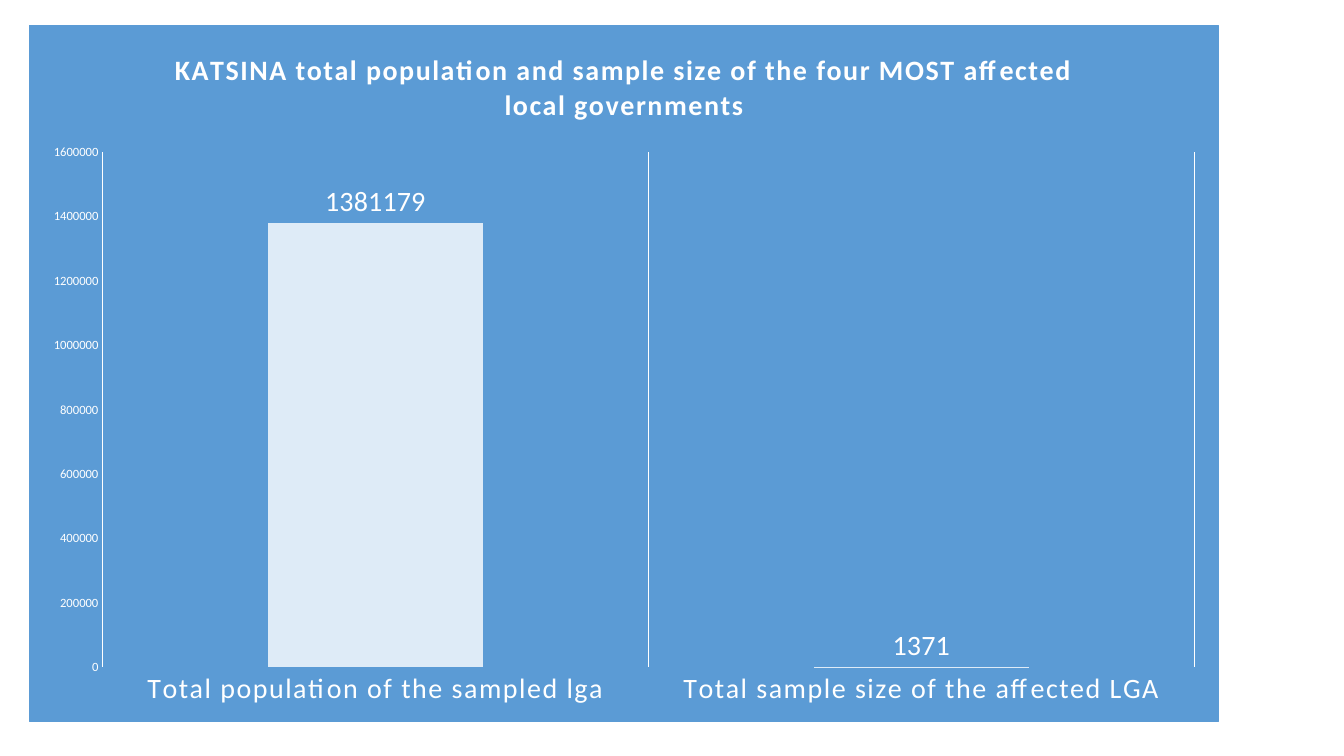
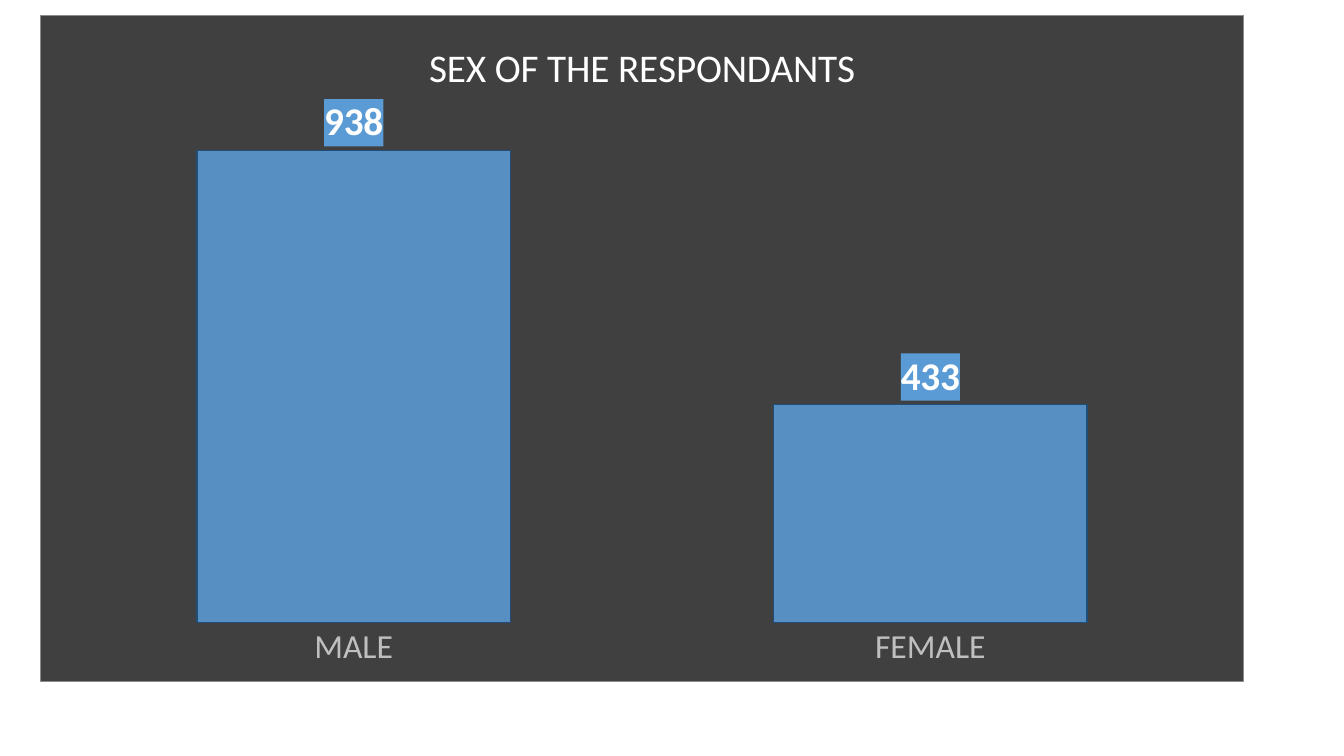
from pptx import Presentation
from pptx.chart.data import CategoryChartData
from pptx.dml.color import RGBColor
from pptx.enum.chart import XL_CHART_TYPE, XL_LABEL_POSITION, XL_TICK_MARK
from pptx.oxml import parse_xml
from pptx.oxml.ns import nsdecls
from pptx.util import Pt

PX = 914400 / 100.8
FONT = "Calibri"
WHITE, BLUE, PALE_BLUE, NAVY = "FFFFFF", "5B9BD5", "DEEBF7", "1F4E79"
CHARCOAL, GRAY, SILVER = "404040", "8C8C8C", "BFBFBF"


def set_font(font, size, color, bold=False, spacing=0):
    font.name, font.size, font.bold = FONT, Pt(size), bold
    font.color.rgb = RGBColor.from_string(color)
    if spacing:
        for props in font_owner.xpath(".//a:defRPr"):
            props.set("spc", str(spacing))


def shape_xml(fill, line="", width=0):
    border = ""
    if line:
        border = (f'<a:ln w="{Pt(width)}"><a:solidFill><a:srgbClr val="{line}"/>'
                  '</a:solidFill></a:ln>')
    return parse_xml(f'<c:spPr {nsdecls("c", "a")}><a:solidFill><a:srgbClr val="{fill}"/>'
                     f'</a:solidFill>{border}</c:spPr>')


# Frame and plot are left, top, width, height in px on the slide
charts = [
    dict(title="KATSINA total population and sample size of the four MOST affected local governments",
         data={"Total population of the sampled lga": 1381179,
               "Total sample size of the affected LGA": 1371},
         frame=(29, 25, 1190, 697), plot=(102, 152, 1093, 516),
         back=BLUE, border=(BLUE, 0.75), bar=PALE_BLUE, bar_line=None, opacity=100,
         gap=154, top=1600000, step=200000, title_size=20, title_bold=True, spacing=100,
         label_size=20, label_bold=False, label_fill=None,
         category_size=20, category_color=WHITE, show_scale=True),
    dict(title="SEX OF THE RESPONDANTS",
         data={"MALE": 938, "FEMALE": 433},
         frame=(40, 15, 1204, 667), plot=(65, 119, 1154, 504),
         back=CHARCOAL, border=(GRAY, 0.5), bar=BLUE, bar_line=NAVY, opacity=88,
         gap=84, top=1000, step=100, title_size=28, title_bold=False, spacing=0,
         label_size=28, label_bold=True, label_fill=BLUE,
         category_size=24, category_color=SILVER, show_scale=False),
]

deck = Presentation()
deck.slide_width, deck.slide_height = round(1344 * PX), round(756 * PX)

for look in charts:
    page = deck.slides.add_slide(deck.slide_layouts[6])
    data = CategoryChartData()
    data.categories = list(look["data"])
    data.add_series("Series 1", list(look["data"].values()))
    chart = page.shapes.add_chart(XL_CHART_TYPE.COLUMN_CLUSTERED,
                                  *[round(n * PX) for n in look["frame"]], data).chart
    chart.has_legend = False
    set_font(chart.font, 10, "000000")
    root = chart.element

    # Chart background
    root.xpath("./c:txPr")[0].addprevious(shape_xml(look["back"], *look["border"]))

    # Title
    chart.has_title = True
    chart.chart_title.include_in_layout = False
    chart.chart_title.text_frame.text = look["title"]
    font_owner = root.xpath("./c:chart/c:title")[0]
    set_font(chart.chart_title.text_frame.paragraphs[0].font, look["title_size"], WHITE,
             look["title_bold"], look["spacing"])

    # Plot position as fractions of the frame
    left, top, width, height = look["frame"]
    plot_left, plot_top, plot_width, plot_height = look["plot"]
    fractions = dict(x=(plot_left - left) / width, y=(plot_top - top) / height,
                     w=plot_width / width, h=plot_height / height)
    modes = '<c:layoutTarget val="inner"/><c:xMode val="edge"/><c:yMode val="edge"/>'
    places = "".join(f'<c:{key} val="{value:.4f}"/>' for key, value in fractions.items())
    area = root.xpath("./c:chart/c:plotArea")[0]
    for old in area.xpath("./c:layout"):
        area.remove(old)
    area.insert(0, parse_xml(f'<c:layout {nsdecls("c")}><c:manualLayout>{modes}{places}'
                             '</c:manualLayout></c:layout>'))

    # Axes
    categories, scale = chart.category_axis, chart.value_axis
    for axis in (categories, scale):
        axis.major_tick_mark = axis.minor_tick_mark = XL_TICK_MARK.NONE
        axis.format.line.fill.background()
    font_owner = root.xpath(".//c:catAx")[0]
    set_font(categories.tick_labels.font, look["category_size"], look["category_color"],
             spacing=look["spacing"])
    scale.has_major_gridlines = False
    scale.minimum_scale, scale.maximum_scale = 0, look["top"]
    scale.major_unit = look["step"]
    scale.visible = look["show_scale"]
    if look["show_scale"]:
        set_font(scale.tick_labels.font, 9, WHITE)
        categories.has_major_gridlines = True
        grid = categories.major_gridlines.format.line
        grid.color.rgb = RGBColor.from_string(WHITE)
        grid.width = Pt(0.75)

    # Bars
    plot = chart.plots[0]
    plot.gap_width = look["gap"]
    plot.vary_by_categories = False
    bars = plot.series[0].format
    bars.fill.solid()
    bars.fill.fore_color.rgb = RGBColor.from_string(look["bar"])
    if look["opacity"] < 100:
        color = root.xpath(".//c:ser/c:spPr/a:solidFill/a:srgbClr")[0]
        color.append(parse_xml(f'<a:alpha {nsdecls("a")} val="{look["opacity"] * 1000}"/>'))
    if look["bar_line"]:
        bars.line.color.rgb = RGBColor.from_string(look["bar_line"])
        bars.line.width = Pt(0.75)

    # Value labels
    labels = plot.series[0].data_labels
    labels.show_value = True
    labels.position = XL_LABEL_POSITION.OUTSIDE_END
    set_font(labels.font, look["label_size"], WHITE, look["label_bold"])
    if look["label_fill"]:
        root.xpath(".//c:ser/c:dLbls/c:txPr")[0].addprevious(shape_xml(look["label_fill"]))

deck.save("out.pptx")
